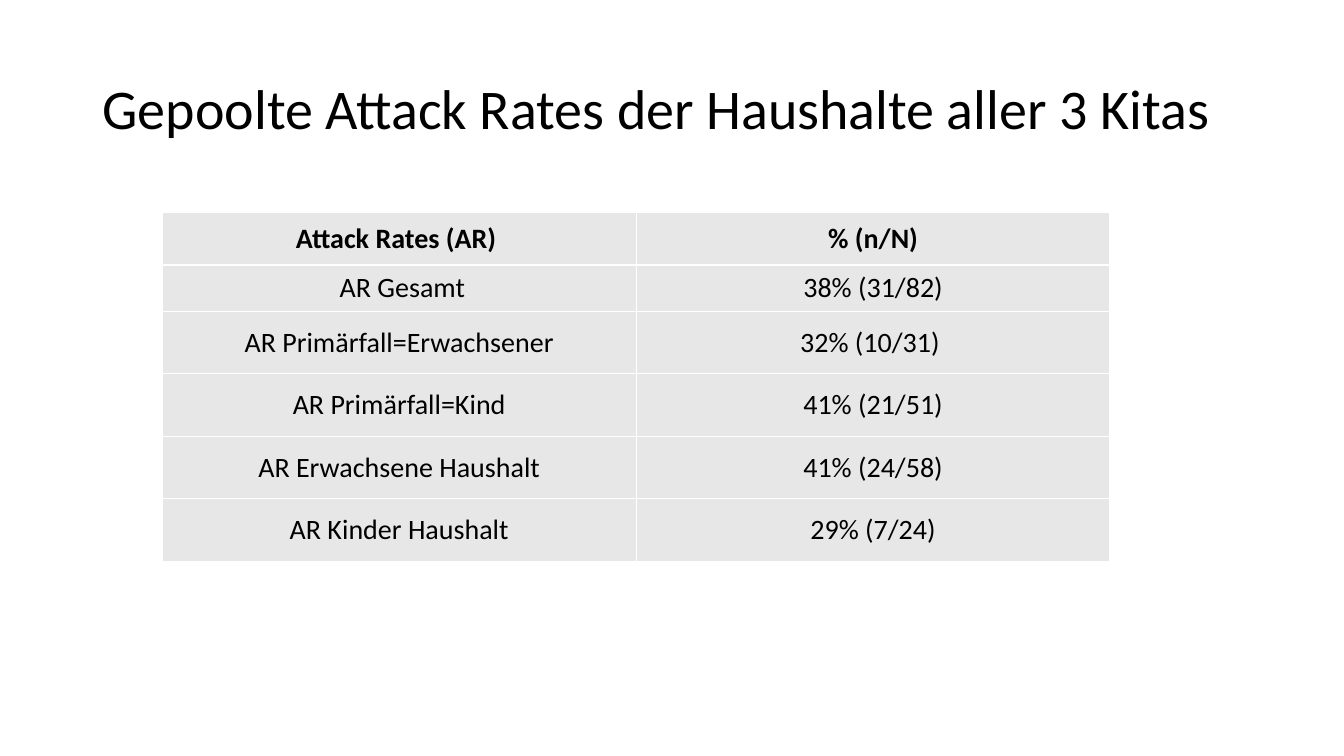
import pptx
import pptx.util
import pptx.dml.color
import pptx.enum.text
import pptx.oxml
import pptx.oxml.ns
from pptx.util import Inches

COLORS = {"text": "000000", "cell": "E7E7E7", "line": "FFFFFF"}
ROWS = [
    ("Attack Rates (AR) ", "% (n/N)"),
    (" AR Gesamt", "38% (31/82)"),
    ("AR Primärfall=Erwachsener", "32% (10/31) "),
    ("AR Primärfall=Kind", "41% (21/51)"),
    ("AR Erwachsene Haushalt", "41% (24/58)"),
    ("AR Kinder Haushalt", "29% (7/24)"),
]
HEIGHTS = [0.52, 0.46] + [0.62] * 4
WIDTH = 4.7


def color(name):
    return pptx.dml.color.RGBColor.from_string(COLORS[name])


def write(frame, text, size=20, bold=False, align="LEFT", space=1.0):
    para = frame.paragraphs[0]
    para.alignment = getattr(pptx.enum.text.PP_ALIGN, align)
    para.line_spacing = space
    run = para.add_run()
    run.text = text
    run.font.name = "Calibri"
    run.font.size = pptx.util.Pt(size)
    run.font.bold = bold
    run.font.color.rgb = color("text")


def add_title(slide, text):
    box = slide.shapes.add_textbox(Inches(0.92), Inches(0.38), Inches(11.7), Inches(1.45))
    frame = box.text_frame
    frame.word_wrap = True
    frame.vertical_anchor = pptx.enum.text.MSO_ANCHOR.MIDDLE
    write(frame, text, size=40, space=0.9)


def style_cell(cell):
    cell.vertical_anchor = pptx.enum.text.MSO_ANCHOR.MIDDLE
    cell.margin_left = cell.margin_right = 0
    cell.margin_top = cell.margin_bottom = 0
    cell.fill.solid()
    cell.fill.fore_color.rgb = color("cell")
    # Borders come before the fill in the cell properties
    props = cell._tc.get_or_add_tcPr()
    for i, side in enumerate(("lnL", "lnR", "lnT", "lnB")):
        props.insert(i, pptx.oxml.parse_xml(
            f'<a:{side} {pptx.oxml.ns.nsdecls("a")} w="12700"><a:solidFill>'
            f'<a:srgbClr val="{COLORS["line"]}"/></a:solidFill></a:{side}>'))


def add_rates(slide, rows):
    shape = slide.shapes.add_table(len(rows), 2, Inches(1.61), Inches(2.11),
                                   Inches(2 * WIDTH), Inches(sum(HEIGHTS)))
    table = shape.table
    for col in table.columns:
        col.width = Inches(WIDTH)
    for r, texts in enumerate(rows):
        table.rows[r].height = Inches(HEIGHTS[r])
        for c, text in enumerate(texts):
            cell = table.cell(r, c)
            style_cell(cell)
            write(cell.text_frame, text, bold=r == 0, align="CENTER")


def main():
    deck = pptx.Presentation()
    deck.slide_width, deck.slide_height = Inches(13.33), Inches(7.5)
    slide = deck.slides.add_slide(deck.slide_layouts[6])
    # Heading
    add_title(slide, "Gepoolte Attack Rates der Haushalte aller 3 Kitas")
    # Table of rates
    add_rates(slide, ROWS)
    deck.save("out.pptx")


if __name__ == "__main__":
    main()
